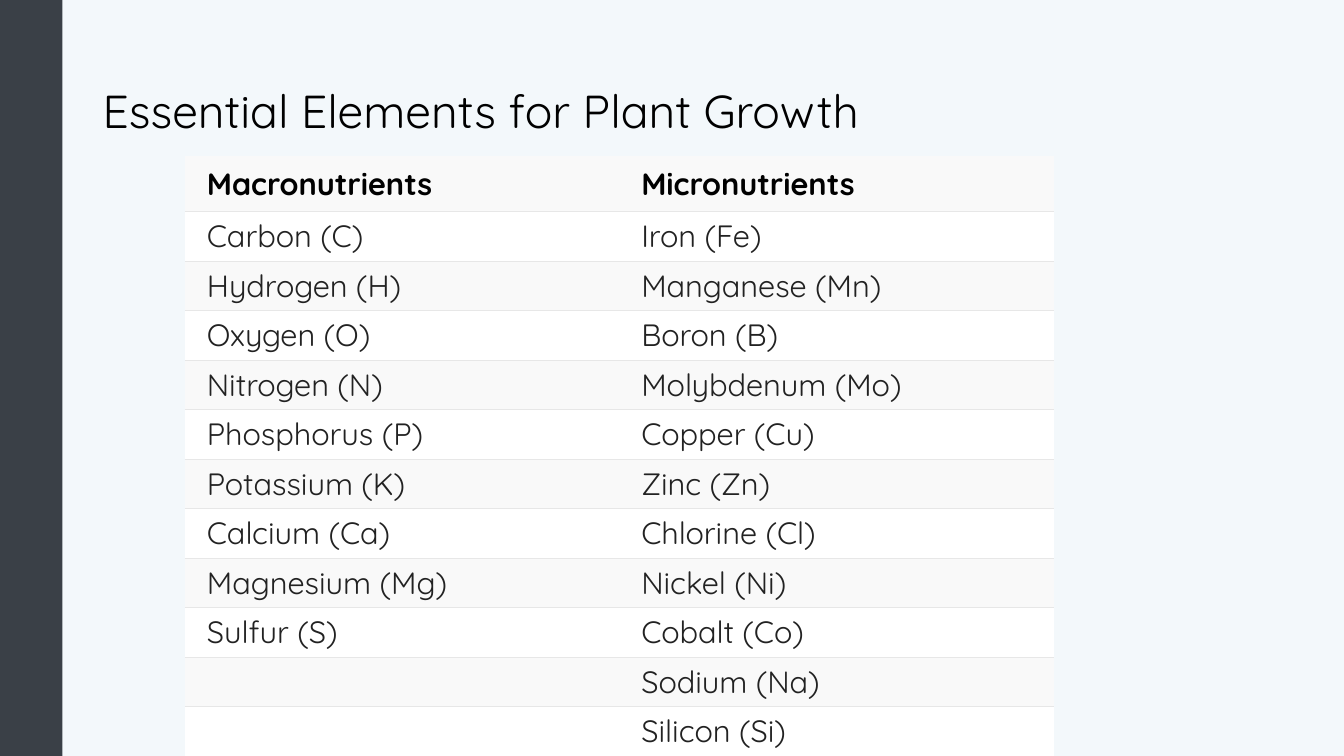
from dataclasses import dataclass
from itertools import zip_longest

from lxml.etree import SubElement
from pptx import Presentation
from pptx.dml.color import RGBColor
from pptx.enum.shapes import MSO_SHAPE
from pptx.enum.text import MSO_ANCHOR, PP_ALIGN
from pptx.oxml import parse_xml
from pptx.oxml.ns import nsdecls, qn
from pptx.util import Pt

FONT = "Quicksand"
RULE_COLOUR = "E7E7E7"
NO_STYLE = "{2D5ABB26-0587-4C30-8999-92F81FD0307C}"

MACRONUTRIENTS = [
    "Carbon (C)", "Hydrogen (H)", "Oxygen (O)", "Nitrogen (N)", "Phosphorus (P)",
    "Potassium (K)", "Calcium (Ca)", "Magnesium (Mg)", "Sulfur (S)",
]
MICRONUTRIENTS = [
    "Iron (Fe)", "Manganese (Mn)", "Boron (B)", "Molybdenum (Mo)", "Copper (Cu)",
    "Zinc (Zn)", "Chlorine (Cl)", "Nickel (Ni)", "Cobalt (Co)", "Sodium (Na)",
    "Silicon (Si)",
]


@dataclass
class RowStyle:
    height: float
    margin: float
    colour: str
    bold: bool


HEADER = RowStyle(40, 5.8, "000000", True)
BODY = RowStyle(35.35, 3.6, "222222", False)


def colour(value: str) -> RGBColor:
    return RGBColor.from_string(value)


def set_font(paragraph, size: float, value: str, bold: bool = False) -> None:
    font = paragraph.font
    font.name, font.size, font.bold = FONT, Pt(size), bold
    font.color.rgb = colour(value)


def add_rule(cell, side: str) -> None:
    """Draw a thin line on the top (lnT) or bottom (lnB) of a cell."""
    line = parse_xml(
        f'<a:{side} {nsdecls("a")} w="{Pt(0.75)}"><a:solidFill>'
        f'<a:srgbClr val="{RULE_COLOUR}"/></a:solidFill></a:{side}>'
    )
    cell._tc.get_or_add_tcPr().insert(0, line)


def set_background(slide) -> None:
    fill = slide.background.fill
    fill.solid()
    fill.fore_color.rgb = colour("F1F7FB")
    tint = slide.element.xpath(".//p:bg//a:srgbClr")[0]
    SubElement(tint, qn("a:alpha"), val="80000")


def add_side_bar(slide) -> None:
    bar = slide.shapes.add_shape(MSO_SHAPE.RECTANGLE, 0, 0, Pt(44.6), Pt(540))
    bar.shadow.inherit = False
    bar.fill.solid()
    bar.fill.fore_color.rgb = colour("3A4047")
    bar.line.fill.background()


def add_title(slide, text: str) -> None:
    title = slide.shapes.title
    title.left, title.top, title.width, title.height = Pt(66.2), Pt(28.8), Pt(828), Pt(104.4)
    title.text_frame.text = text
    title.text_frame.vertical_anchor = MSO_ANCHOR.MIDDLE
    paragraph = title.text_frame.paragraphs[0]
    paragraph.alignment = PP_ALIGN.LEFT
    paragraph.line_spacing = 0.9
    set_font(paragraph, 33, "000000")


def fill_cell(cell, text: str, style: RowStyle, fill: str) -> None:
    cell.fill.solid()
    cell.fill.fore_color.rgb = colour(fill)
    cell.vertical_anchor = MSO_ANCHOR.MIDDLE
    cell.margin_left = cell.margin_right = Pt(15.8)
    cell.margin_top = cell.margin_bottom = Pt(style.margin)
    cell.text = text
    set_font(cell.text_frame.paragraphs[0], 22, style.colour, style.bold)


def add_nutrient_table(slide) -> None:
    rows = [("Macronutrients", "Micronutrients")]
    rows += zip_longest(MACRONUTRIENTS, MICRONUTRIENTS, fillvalue="")
    height = HEADER.height + BODY.height * (len(rows) - 1)
    frame = slide.shapes.add_table(len(rows), 2, Pt(132), Pt(111.2), Pt(620.6), Pt(height))
    table = frame.table
    table._tbl.tblPr.find(qn("a:tableStyleId")).text = NO_STYLE
    for row_index, texts in enumerate(rows):
        style = BODY if row_index else HEADER
        table.rows[row_index].height = Pt(style.height)
        for column_index, text in enumerate(texts):
            cell = table.cell(row_index, column_index)
            fill_cell(cell, text, style, "FFFFFF" if row_index % 2 else "F9F9F9")
            if row_index < len(rows) - 1:
                add_rule(cell, "lnB")
            if row_index > 0:
                add_rule(cell, "lnT")


def main() -> None:
    deck = Presentation()
    deck.slide_width, deck.slide_height = Pt(960), Pt(540)
    slide = deck.slides.add_slide(deck.slide_layouts[5])
    set_background(slide)
    add_side_bar(slide)
    add_title(slide, "Essential Elements for Plant Growth")
    add_nutrient_table(slide)
    deck.save("out.pptx")


if __name__ == "__main__":
    main()
